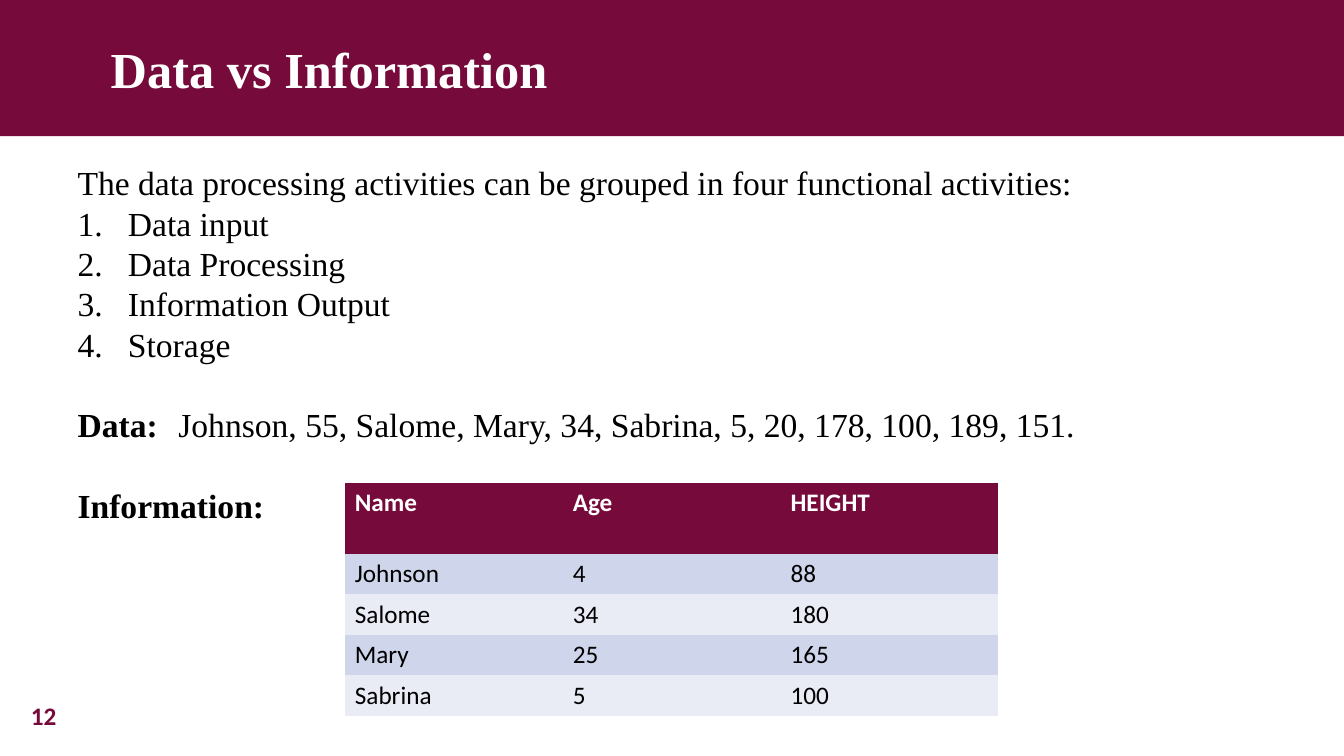
"""Build the Data vs Information slide."""
import pptx
import pptx.dml.color
import pptx.enum.text
import pptx.oxml
import pptx.oxml.ns
import pptx.util
from pptx.util import Cm

COLORS = {"wine": "760A3A", "white": "FFFFFF", "black": "000000",
          "band_dark": "CFD5EA", "band_light": "E9EBF5"}
SERIF, SANS = "Times New Roman", "Calibri"
TITLE = "Data vs Information"
INTRO = "The data processing activities can be grouped in four functional activities:"
ACTIVITIES = ["Data input", "Data Processing", "Information Output", "Storage"]
DATA = ("Data:", "\tJohnson, 55, Salome, Mary, 34, Sabrina, 5, 20, 178, 100, 189, 151.")
INFORMATION = "Information:"
PAGE = "12"
PEOPLE = [
    ("Name", "Age", "HEIGHT"),
    ("Johnson", "4", "88"),
    ("Salome", "34", "180"),
    ("Mary", "25", "165"),
    ("Sabrina", "5", "100"),
]
LINE = 28.8
INDENT = Cm(1.27)
DATA_TAB = Cm(2.44)
HEADER_H, ROW_H, COL_W = Cm(1.79), Cm(1.02), Cm(5.49)
NO_GRID = "{2D5ABB26-0587-4C30-8999-92F81FD0307C}"


def rgb(name):
    return pptx.dml.color.RGBColor.from_string(COLORS[name])


def add_text(p, text, size=24, font=SERIF, color="black", bold=False):
    r = p.add_run()
    r.text = text
    r.font.size = pptx.util.Pt(size)
    r.font.name = font
    r.font.bold = bold
    r.font.color.rgb = rgb(color)


def place(sp, left, top, width, height):
    sp.left, sp.top, sp.width, sp.height = (Cm(v) for v in (left, top, width, height))


def format_paragraph(p, numbered=False, gap=0, tab=None):
    p.line_spacing = pptx.util.Pt(LINE)
    p.space_before = pptx.util.Pt(gap)
    pPr = p._p.get_or_add_pPr()
    indent = INDENT if numbered else 0
    pPr.set("marL", str(indent))
    pPr.set("indent", str(-indent))
    ns = pptx.oxml.ns.nsdecls("a")
    if numbered:
        parts = [f'<a:buFont {ns} typeface="+mj-lt"/>',
                 f'<a:buAutoNum {ns} type="arabicPeriod"/>']
    else:
        parts = [f"<a:buNone {ns}/>"]
    if tab:
        parts.append(f'<a:tabLst {ns}><a:tab pos="{tab}" algn="l"/></a:tabLst>')
    for part in parts:
        pPr.append(pptx.oxml.parse_xml(part))


def build_title(sp):
    place(sp, 0, 0, 33.87, 3.43)
    sp.fill.solid()
    sp.fill.fore_color.rgb = rgb("wine")
    tf = sp.text_frame
    tf.auto_size = pptx.enum.text.MSO_AUTO_SIZE.NONE
    tf.vertical_anchor = pptx.enum.text.MSO_ANCHOR.MIDDLE
    tf.margin_left = Cm(2.79)
    p = tf.paragraphs[0]
    p.alignment = pptx.enum.text.PP_ALIGN.LEFT
    add_text(p, TITLE, size=36, color="white", bold=True)


def build_body(sp):
    place(sp, 1.7, 3.96, 29.41, 10.52)
    tf = sp.text_frame
    tf.auto_size = pptx.enum.text.MSO_AUTO_SIZE.NONE
    p = tf.paragraphs[0]
    format_paragraph(p)
    add_text(p, INTRO)
    for activity in ACTIVITIES:
        p = tf.add_paragraph()
        format_paragraph(p, numbered=True)
        add_text(p, activity)
    p = tf.add_paragraph()
    format_paragraph(p, gap=LINE, tab=DATA_TAB)
    add_text(p, DATA[0], bold=True)
    add_text(p, DATA[1])
    p = tf.add_paragraph()
    format_paragraph(p, gap=LINE)
    add_text(p, INFORMATION, bold=True)


def build_table(s):
    rows, cols = len(PEOPLE), len(PEOPLE[0])
    frame = s.shapes.add_table(rows, cols, Cm(8.69), Cm(12.16), COL_W * cols,
                               HEADER_H + ROW_H * (rows - 1))
    table = frame.table
    for style in frame._element.iter(pptx.oxml.ns.qn("a:tableStyleId")):
        style.text = NO_GRID
    for col in table.columns:
        col.width = COL_W
    for i, person in enumerate(PEOPLE):
        header = i == 0
        table.rows[i].height = HEADER_H if header else ROW_H
        fill = "wine" if header else "band_dark" if i % 2 else "band_light"
        for j, value in enumerate(person):
            cell = table.cell(i, j)
            cell.fill.solid()
            cell.fill.fore_color.rgb = rgb(fill)
            add_text(cell.text_frame.paragraphs[0], value, size=18, font=SANS,
                     color="white" if header else "black", bold=header)


def main():
    prs = pptx.Presentation()
    prs.slide_width, prs.slide_height = Cm(33.87), Cm(19.05)
    s = prs.slides.add_slide(prs.slide_layouts[1])
    build_title(s.shapes.title)
    build_body(s.placeholders[1])
    page = s.shapes.add_textbox(Cm(0.53), Cm(17.53), Cm(1.17), Cm(1.02))
    add_text(page.text_frame.paragraphs[0], PAGE, size=18, font=SANS,
             color="wine", bold=True)
    build_table(s)
    prs.save("out.pptx")


if __name__ == "__main__":
    main()
